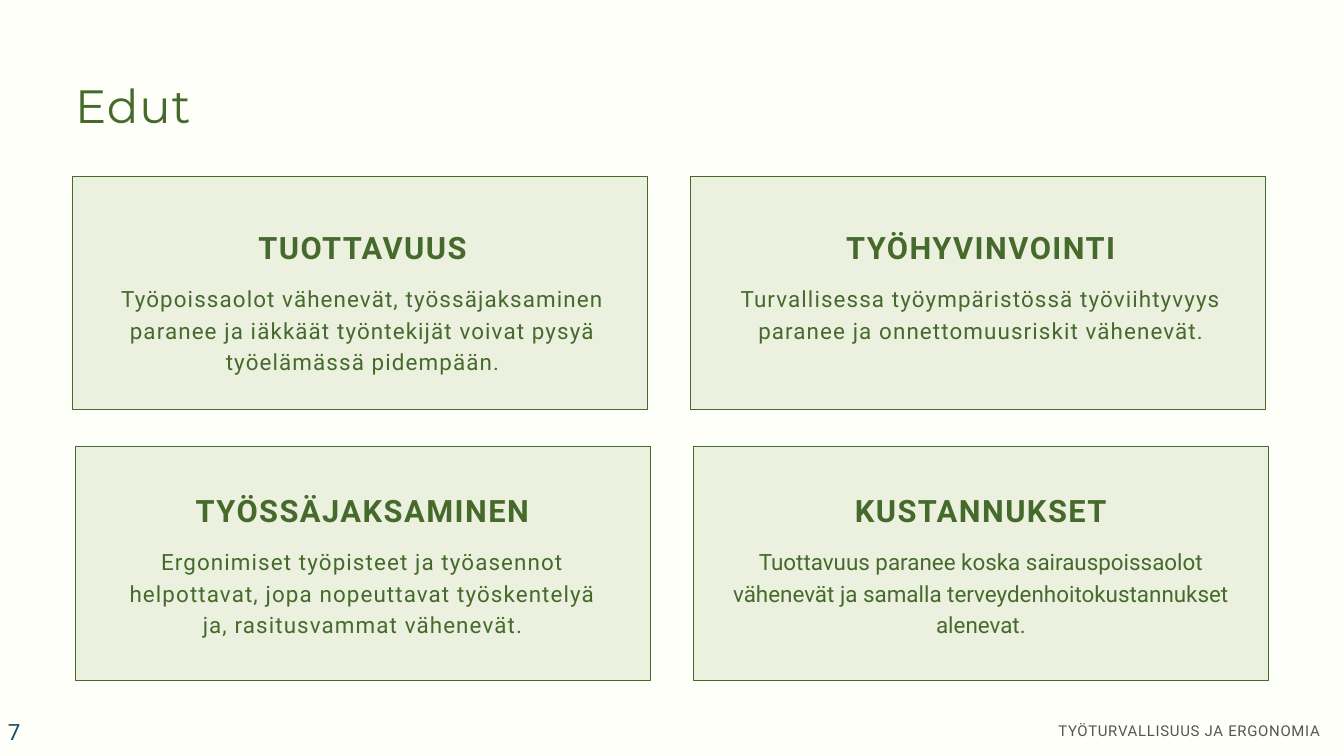
from dataclasses import dataclass

from pptx import Presentation
from pptx.dml.color import RGBColor
from pptx.enum.shapes import MSO_SHAPE
from pptx.enum.text import MSO_ANCHOR, MSO_AUTO_SIZE, PP_ALIGN
from pptx.util import Cm, Pt

RECTANGLE = MSO_SHAPE.RECTANGLE
LEFT, CENTER, RIGHT = PP_ALIGN.LEFT, PP_ALIGN.CENTER, PP_ALIGN.RIGHT
MIDDLE = MSO_ANCHOR.MIDDLE
GROW = MSO_AUTO_SIZE.SHAPE_TO_FIT_TEXT


@dataclass(frozen=True)
class TextStyle:
    name: str
    size: float
    color: str
    spacing: float
    line: float = None
    align: PP_ALIGN = LEFT
    bold: bool = False


@dataclass(frozen=True)
class Theme:
    background: str = "FEFFF8"
    card: str = "EBF1DE"
    border: str = "456A2C"
    title: TextStyle = TextStyle("Montserrat", 50, "456A2C", 1, 66.8)
    heading: TextStyle = TextStyle("Roboto", 33, "456A2C", 1.6, 41.2, CENTER, True)
    body: TextStyle = TextStyle("Roboto", 24, "456A2C", 1.2, 33.6, CENTER)
    tight_body: TextStyle = TextStyle("Roboto", 24, "456A2C", 0, 33.6, CENTER)
    footer: TextStyle = TextStyle("Roboto", 16, "52584D", 0.8, 22.4, RIGHT)
    number: TextStyle = TextStyle("Roboto", 24, "1E4D65", 1.2)


THEME = Theme()
COLUMN_PITCH = 23.37
CARD_ROW_PITCH = 10.22
TEXT_ROW_PITCH = 9.95
LOWER_ROW_SHIFT = 0.11

BENEFITS = [
    [
        ("TUOTTAVUUS",
         "Työpoissaolot vähenevät, työssäjaksaminen paranee ja iäkkäät "
         "työntekijät voivat pysyä työelämässä pidempään.", 3.56, THEME.body),
        ("TYÖHYVINVOINTI",
         "Turvallisessa työympäristössä työviihtyvyys paranee ja "
         "onnettomuusriskit vähenevät.", 2.34, THEME.body),
    ],
    [
        ("TYÖSSÄJAKSAMINEN",
         "Ergonimiset työpisteet ja työasennot helpottavat, jopa nopeuttavat "
         "työskentelyä ja, rasitusvammat vähenevät.", 3.56, THEME.body),
        ("KUSTANNUKSET",
         "Tuottavuus paranee koska sairauspoissaolot vähenevät ja samalla "
         "terveydenhoitokustannukset alenevat.", 3.56, THEME.tight_body),
    ],
]


def set_attributes(target, values):
    for name, value in values.items():
        setattr(target, name, value)


def add_text(shapes, text, box, style, frame_format=None):
    """Add a text box at box (left, top, width, height in cm), without insets by default."""
    frame = shapes.add_textbox(*map(Cm, box)).text_frame
    set_attributes(frame, frame_format or {
        "margin_left": 0, "margin_top": 0, "margin_right": 0,
        "margin_bottom": 0, "auto_size": GROW})
    frame.word_wrap = True
    paragraph = frame.paragraphs[0]
    paragraph.alignment = style.align
    if style.line:
        paragraph.line_spacing = Pt(style.line)
    run = paragraph.add_run()
    run.text = text
    set_attributes(run.font, {
        "name": style.name, "size": Pt(style.size), "bold": style.bold})
    run.font.color.rgb = RGBColor.from_string(style.color)
    run.font._element.set("spc", str(round(style.spacing * 100)))


def add_card(slide, row, column):
    left = 2.74 + column * COLUMN_PITCH + row * LOWER_ROW_SHIFT
    top = 6.65 + row * CARD_ROW_PITCH
    card = slide.shapes.add_shape(
        RECTANGLE, Cm(left), Cm(top), Cm(21.72), Cm(8.84))
    card.shadow.inherit = False
    card.fill.solid()
    card.fill.fore_color.rgb = RGBColor.from_string(THEME.card)
    card.line.color.rgb = RGBColor.from_string(THEME.border)
    card.line.width = Pt(0.75)


def add_benefit(slide, row, column, benefit):
    """Add a card with its grouped heading and body text."""
    heading, body, body_height, body_style = benefit
    add_card(slide, row, column)
    left = 4.32 + column * COLUMN_PITCH
    top = 8.59 + row * TEXT_ROW_PITCH
    group = slide.shapes.add_group_shape()
    add_text(group.shapes, heading, (left, top, 18.77, 1.42), THEME.heading)
    add_text(group.shapes, body, (left, top + 2.03, 18.77, body_height), body_style)


def main():
    presentation = Presentation()
    set_attributes(presentation, {"slide_width": Cm(50.8), "slide_height": Cm(28.58)})
    slide = presentation.slides.add_slide(presentation.slide_layouts[6])
    slide.background.fill.solid()
    slide.background.fill.fore_color.rgb = RGBColor.from_string(THEME.background)

    add_text(slide.shapes, "TYÖTURVALLISUUS JA ERGONOMIA",
             (28.78, 27.18, 21.13, 0.74), THEME.footer)
    add_text(slide.shapes, "Edut", (2.84, 2.67, 44.98, 2.26), THEME.title)
    for row, benefits in enumerate(BENEFITS):
        for column, benefit in enumerate(benefits):
            add_benefit(slide, row, column, benefit)
    add_text(slide.shapes, "7", (0.05, 27.15, 5.97, 1.02), THEME.number,
             {"vertical_anchor": MIDDLE})

    presentation.save("out.pptx")


if __name__ == "__main__":
    main()
